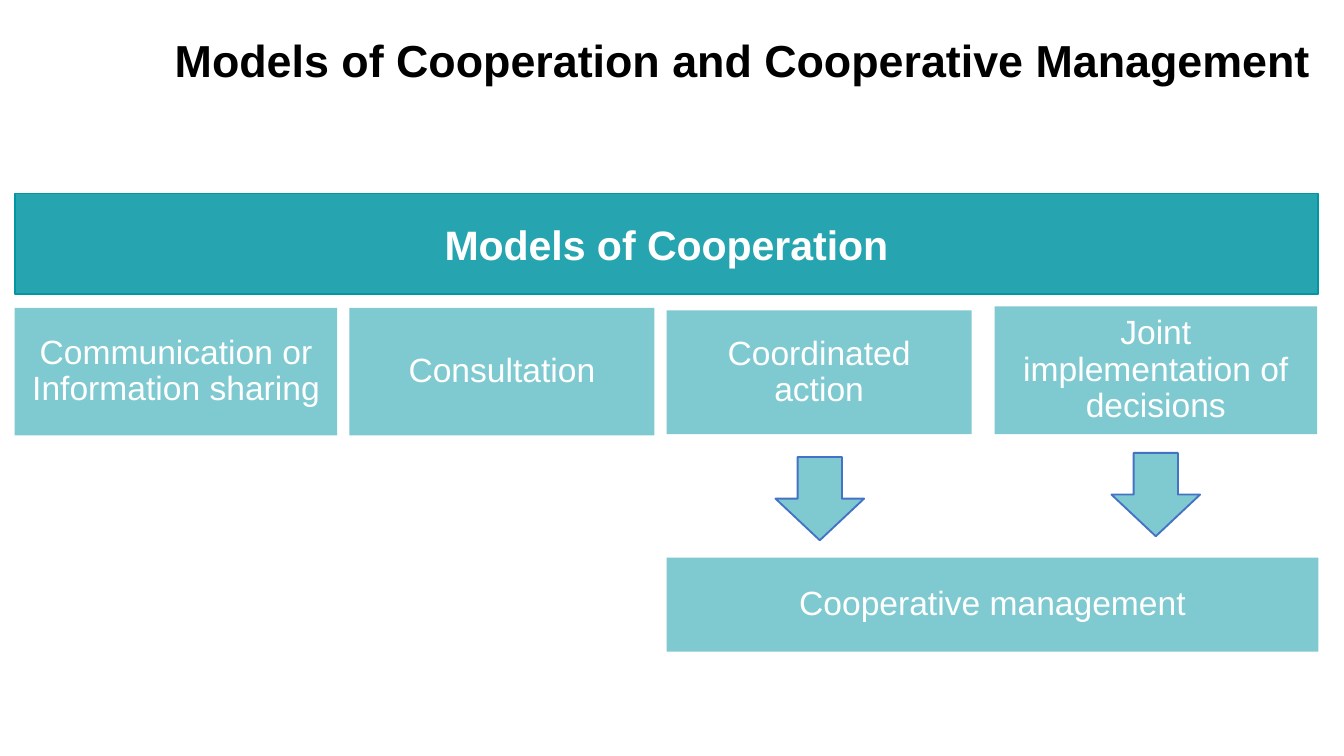
from lxml import etree
from pptx import Presentation
from pptx.dml.color import RGBColor
from pptx.enum.shapes import MSO_SHAPE as SHAPE
from pptx.enum.text import MSO_ANCHOR as ANCHOR, MSO_AUTO_SIZE as AUTO_SIZE, PP_ALIGN as ALIGN
from pptx.oxml.ns import qn
from pptx.util import Inches, Pt

COLORS = {"teal": "0096A4", "blue": "4472C4", "white": "FFFFFF", "black": "000000"}
FONT = "Arial"
SLIDE_WIDTH = 10
SLIDE_HEIGHT = SLIDE_WIDTH * 9 / 16
LEFT, RIGHT = 0.11, 9.81
MANAGEMENT_LEFT = 4.96

MODELS = [  # text, left, top, width, height
    ("Communication or Information sharing ", LEFT, 2.29, 2.4, 0.95),
    ("Consultation", 2.6, 2.29, 2.27, 0.95),
    ("Coordinated action", MANAGEMENT_LEFT, 2.31, 2.27, 0.92),
    ("Joint implementation of decisions", 7.4, 2.28, 2.4, 0.95),
]
ARROWS = [(5.77, 3.4), (8.27, 3.37)]


def rgb(name):
    return RGBColor.from_string(COLORS[name])


class Deck:
    """Holds the presentation, its style and the current slide."""

    def __init__(self, width, height):
        self.prs = Presentation()
        self.prs.slide_width, self.prs.slide_height = Inches(width), Inches(height)
        self.slide = self.prs.slides.add_slide(self.prs.slide_layouts[5])

    def fill(self, s, color, opacity):
        """Fill a shape, with opacity in percent."""
        s.fill.solid()
        s.fill.fore_color.rgb = rgb(color)
        clr = s.element.spPr.find(qn("a:solidFill"))[0]
        etree.SubElement(clr, qn("a:alpha")).set("val", str(opacity * 1000))

    def text(self, s, text, size, color, align, bold=False, spacing=1.0, inset=0.05):
        tf = s.text_frame
        tf.word_wrap = True
        tf.vertical_anchor = ANCHOR.MIDDLE
        tf.margin_left = tf.margin_right = Inches(0.1)
        tf.margin_top = tf.margin_bottom = Inches(inset)
        p = tf.paragraphs[0]
        p.alignment, p.line_spacing = align, spacing
        r = p.add_run()
        r.text = text
        r.font.name, r.font.size, r.font.bold = FONT, Pt(size), bold
        r.font.color.rgb = rgb(color)

    def title(self, text, left, top, width, height):
        s = self.slide.shapes.title
        s.left, s.top, s.width, s.height = map(Inches, (left, top, width, height))
        self.fill(s, "white", 55)
        self.text(s, text, 24, "black", ALIGN.LEFT, bold=True)
        s.text_frame.auto_size = AUTO_SIZE.SHAPE_TO_FIT_TEXT

    def shape(self, kind, left, top, width, height, opacity=50, line=None):
        s = self.slide.shapes.add_shape(kind, *map(Inches, (left, top, width, height)))
        s.shadow.inherit = False
        self.fill(s, "teal", opacity)
        if line:
            s.line.color.rgb = rgb(line)
            s.line.width = Pt(1)
        else:
            s.line.fill.background()
        return s

    def header(self, text, *box):
        s = self.shape(SHAPE.RECTANGLE, *box, opacity=85, line="teal")
        self.text(s, text, 22, "white", ALIGN.CENTER, bold=True, inset=0.1)

    def box(self, text, *box):
        s = self.shape(SHAPE.RECTANGLE, *box)
        self.text(s, text, 18, "white", ALIGN.CENTER, spacing=0.9)

    def down_arrow(self, left, top):
        self.shape(SHAPE.DOWN_ARROW, left, top, 0.66, 0.62, line="blue")


def main():
    deck = Deck(SLIDE_WIDTH, SLIDE_HEIGHT)
    deck.title("Models of Cooperation and Cooperative Management", 1.2, 0.19, 8.8, 0.5)
    for model in MODELS:
        deck.box(*model)
    deck.header("Models of Cooperation", LEFT, 1.44, RIGHT - LEFT, 0.75)
    deck.box("Cooperative management", MANAGEMENT_LEFT, 4.15, RIGHT - MANAGEMENT_LEFT, 0.7)
    for arrow in ARROWS:
        deck.down_arrow(*arrow)
    deck.prs.save("out.pptx")


if __name__ == "__main__":
    main()
